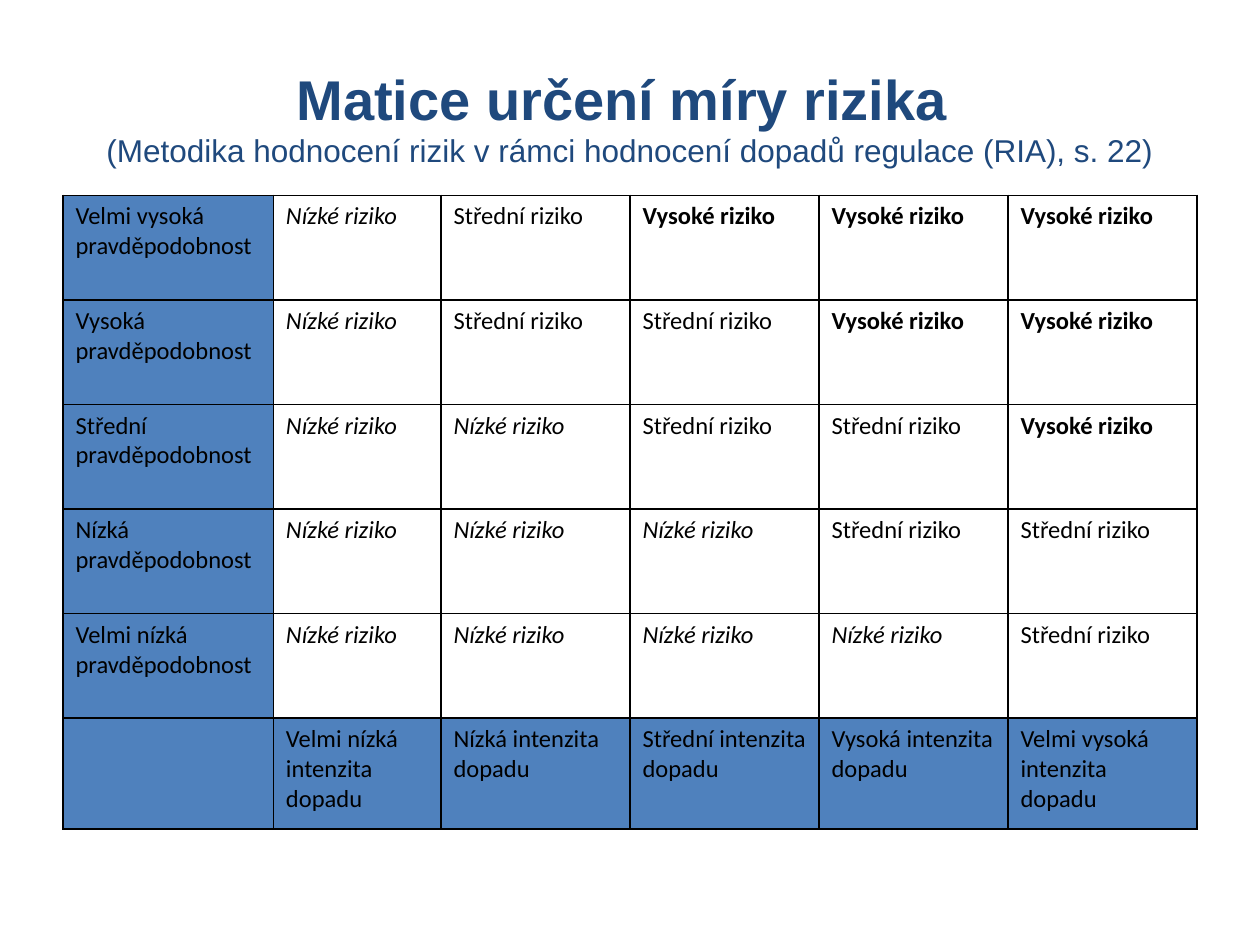
from lxml import etree
from pptx import Presentation
from pptx.dml.color import RGBColor
from pptx.enum.text import MSO_ANCHOR, PP_ALIGN
from pptx.oxml.ns import qn
from pptx.util import Inches, Pt

MIDDLE = MSO_ANCHOR.MIDDLE
CENTER = PP_ALIGN.CENTER
NAVY = RGBColor(0x1F, 0x49, 0x7D)
BLUE = RGBColor(0x4F, 0x81, 0xBD)
BLACK = RGBColor(0, 0, 0)

RISKS = {"N": "Nízké riziko", "S": "Střední riziko", "V": "Vysoké riziko"}
MATRIX = [
    ("Velmi vysoká", "NSVVV"),
    ("Vysoká", "NSSVV"),
    ("Střední", "NNSSV"),
    ("Nízká", "NNNSS"),
    ("Velmi nízká", "NNNNS"),
]
COLUMN_WIDTHS = [1.67, 1.33, 1.5, 1.5, 1.5, 1.5]
ROW_HEIGHTS = [0.83] * 5 + [0.88]


def add_text(paragraph, text, size=14, font="Calibri", color=BLACK, bold=False, italic=False):
    run = paragraph.add_run()
    run.text = text
    run.font.size = Pt(size)
    run.font.name = font
    run.font.color.rgb = color
    run.font.bold = bold
    run.font.italic = italic


def add_borders(cell):
    properties = cell._tc.get_or_add_tcPr()
    for side in ("a:lnL", "a:lnR", "a:lnT", "a:lnB"):
        line = etree.SubElement(properties, qn(side), w=str(Pt(1)))
        fill = etree.SubElement(line, qn("a:solidFill"))
        etree.SubElement(fill, qn("a:srgbClr"), val=str(BLACK))


prs = Presentation()
prs.slide_width = Inches(10)
prs.slide_height = Inches(7.5)
slide = prs.slides.add_slide(prs.slide_layouts[5])

title = slide.shapes.title
title.left, title.top = Inches(0.5), Inches(0.3)
title.width, title.height = Inches(9), Inches(1.25)
title.text_frame.vertical_anchor = MIDDLE
heading = title.text_frame.paragraphs[0]
heading.alignment = CENTER
add_text(heading, "Matice určení míry rizika ", size=32, font="Arial", color=NAVY, bold=True)
heading.add_line_break()
add_text(heading, "(Metodika hodnocení rizik v rámci hodnocení dopadů regulace (RIA), s. 22)",
         size=18, font="Arial", color=NAVY)

table = slide.shapes.add_table(
    len(ROW_HEIGHTS), len(COLUMN_WIDTHS), Inches(0.5), Inches(1.55),
    Inches(sum(COLUMN_WIDTHS)), Inches(sum(ROW_HEIGHTS))).table
table.first_row = False
table.horz_banding = False
for column, width in zip(table.columns, COLUMN_WIDTHS):
    column.width = Inches(width)
for row, height in zip(table.rows, ROW_HEIGHTS):
    row.height = Inches(height)

last_row = len(MATRIX)
for cell in table.iter_cells():
    add_borders(cell)
    cell.fill.background()
header_cells = [table.cell(r, 0) for r in range(last_row)]
header_cells += [table.cell(last_row, c) for c in range(len(COLUMN_WIDTHS))]
for cell in header_cells:
    cell.fill.solid()
    cell.fill.fore_color.rgb = BLUE

for r, (level, risks) in enumerate(MATRIX):
    add_text(table.cell(r, 0).text_frame.paragraphs[0], f"{level} pravděpodobnost")
    for c, risk in enumerate(risks, start=1):
        add_text(table.cell(r, c).text_frame.paragraphs[0], RISKS[risk],
                 bold=risk == "V", italic=risk == "N")

# Impact intensity rises to the right, probability rises upwards
for c, (level, _) in enumerate(reversed(MATRIX), start=1):
    add_text(table.cell(last_row, c).text_frame.paragraphs[0], f"{level} intenzita dopadu")

prs.save("out.pptx")
